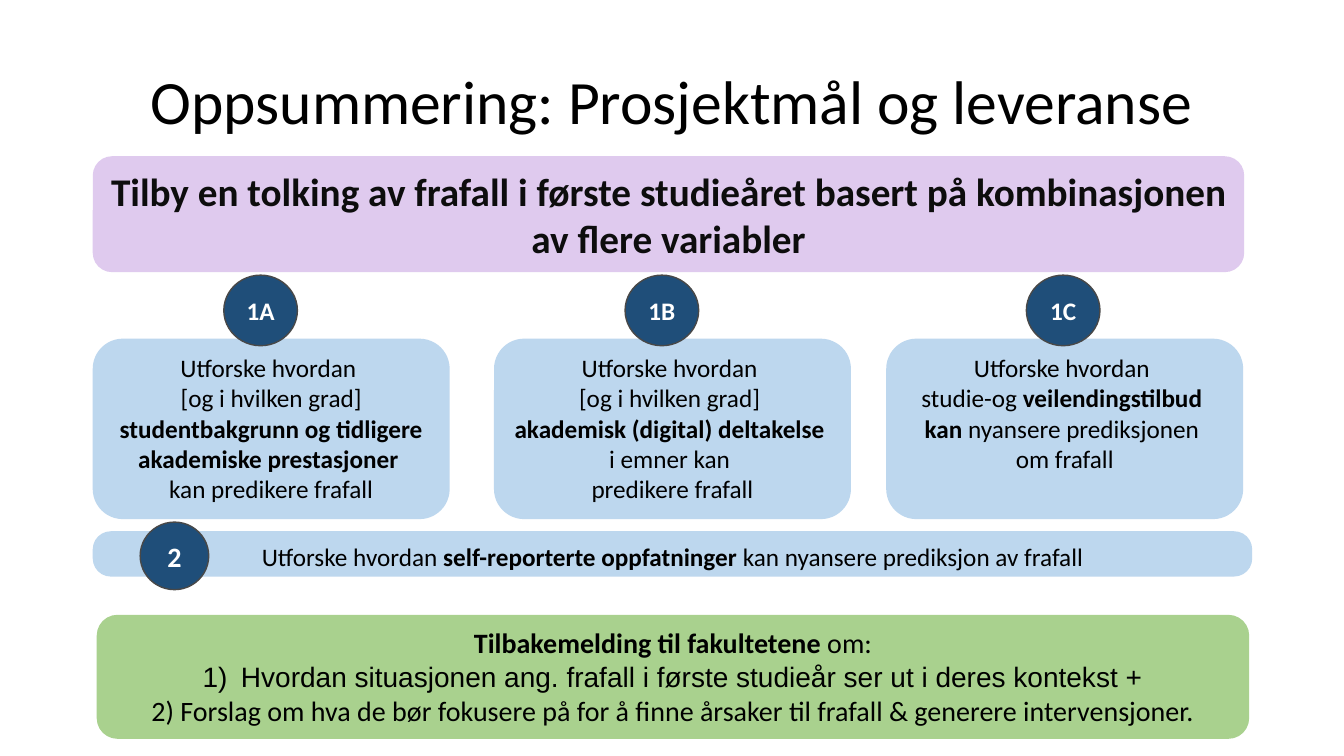
from lxml.etree import SubElement
from pptx import Presentation
from pptx.dml.color import RGBColor
from pptx.enum.shapes import MSO_SHAPE
from pptx.enum.text import MSO_ANCHOR, PP_ALIGN
from pptx.oxml.ns import qn
from pptx.util import Inches, Pt

LILAC, BLUE, GREEN, NAVY = "DFCAEE", "BDD7EE", "A9D18E", "1F4E79"
BLACK, NEAR_BLACK, WHITE, OUTLINE = "000000", "0D0D0D", "FFFFFF", "484848"

CARDS = [
    (0.92, "1A", "Utforske hvordan \n[og i hvilken grad] *studentbakgrunn og tidligere "
                 "akademiske prestasjoner \n*kan predikere frafall"),
    (4.9, "1B", "Utforske hvordan \n[og i hvilken grad] \n*akademisk (digital) deltakelse \n"
                "*i emner kan \npredikere frafall"),
    (8.79, "1C", "Utforske hvordan \nstudie-og *veilendingstilbud \n"
                 "kan *nyansere prediksjonen \nom frafall"),
]


def color(hex_string):
    return RGBColor.from_string(hex_string)


def write(para, text, size, hex_color=BLACK, font="Calibri"):
    """Write centred text; an asterisk switches bold on or off, a newline breaks the line."""
    para.alignment = PP_ALIGN.CENTER
    para.font.name = font
    para.font.size = Pt(size)
    para.font.color.rgb = color(hex_color)
    for part, words in enumerate(text.split("*")):
        for number, line in enumerate(words.split("\n")):
            if number:
                para.add_line_break()
            if line:
                span = para.add_run()
                span.text = line
                span.font.bold = part % 2 == 1


def number_item(para, indent):
    """Number the paragraph as 1) with a hanging indent."""
    properties = para._p.get_or_add_pPr()
    properties.set("marL", str(Inches(indent)))
    properties.set("indent", str(-Inches(indent)))
    SubElement(properties, qn("a:buFont"), typeface="+mj-lt")
    SubElement(properties, qn("a:buAutoNum"), type="arabicParenR")


def add_panel(page, box, fill, kind=MSO_SHAPE.ROUNDED_RECTANGLE):
    panel = page.shapes.add_shape(kind, *map(Inches, box))
    panel.shadow.inherit = False
    panel.fill.solid()
    panel.fill.fore_color.rgb = color(fill)
    panel.line.fill.background()
    panel.text_frame.word_wrap = True
    panel.text_frame.vertical_anchor = MSO_ANCHOR.TOP
    return panel


def add_badge(page, box, label, size):
    badge = add_panel(page, box, NAVY, MSO_SHAPE.OVAL)
    badge.line.color.rgb = color(OUTLINE)
    badge.line.width = Pt(1)
    frame = badge.text_frame
    frame.vertical_anchor = MSO_ANCHOR.MIDDLE
    frame.margin_left = frame.margin_right = 0
    frame.margin_top = frame.margin_bottom = 0
    write(frame.paragraphs[0], f"*{label}", size, WHITE)


def add_title(page, box):
    frame = page.shapes.add_textbox(*map(Inches, box)).text_frame
    frame.word_wrap = True
    frame.vertical_anchor = MSO_ANCHOR.MIDDLE
    frame.paragraphs[0].line_spacing = 0.9
    write(frame.paragraphs[0], "Oppsummering: Prosjektmål og leveranse", 44)


def add_goal(page, box):
    para = add_panel(page, box, LILAC).text_frame.paragraphs[0]
    write(para, "*Tilby en tolking av frafall i første studieåret basert på "
                "kombinasjonen av flere variabler", 28, NEAR_BLACK)


def add_cards(page, top, width, height):
    for left, label, text in CARDS:
        card = add_panel(page, (left, top, width, height), BLUE)
        write(card.text_frame.paragraphs[0], text, 18)
    for column, (left, label, text) in enumerate(CARDS):
        add_badge(page, (2.22 + 3.98 * column, top - 0.63, 0.73, 0.7), label, 18)


def add_strip(page, box):
    left, top, width, height = box
    strip = add_panel(page, box, BLUE)
    strip.adjustments[0] = 0.4
    write(strip.text_frame.paragraphs[0],
          "Utforske hvordan *self-reporterte oppfatninger *kan nyansere prediksjon av frafall", 18)
    add_badge(page, (left + 0.47, top - 0.09, 0.68, 0.67), "2", 20)


def add_feedback(page, box):
    frame = add_panel(page, box, GREEN).text_frame
    write(frame.paragraphs[0], "*Tilbakemelding til fakultetene *om:", 20)
    context = frame.add_paragraph()
    number_item(context, 0.38)
    write(context, "Hvordan situasjonen ang. frafall i første studieår ser ut i deres kontekst +",
          20, font="Arial")
    write(frame.add_paragraph(), "2) Forslag om hva de bør fokusere på for å finne årsaker til "
                                 "frafall & generere intervensjoner.", 20)


def main():
    deck = Presentation()
    deck.slide_width, deck.slide_height = Inches(13.33), Inches(7.5)
    page = deck.slides.add_slide(deck.slide_layouts[6])
    add_goal(page, (0.92, 1.55, 11.42, 1.15))
    add_title(page, (0.92, 0.4, 11.49, 1.27))
    add_cards(page, top=3.36, width=3.54, height=1.79)
    add_strip(page, (0.92, 5.27, 11.5, 0.45))
    add_feedback(page, (0.96, 6.1, 11.43, 1.23))
    deck.save("out.pptx")


if __name__ == "__main__":
    main()
